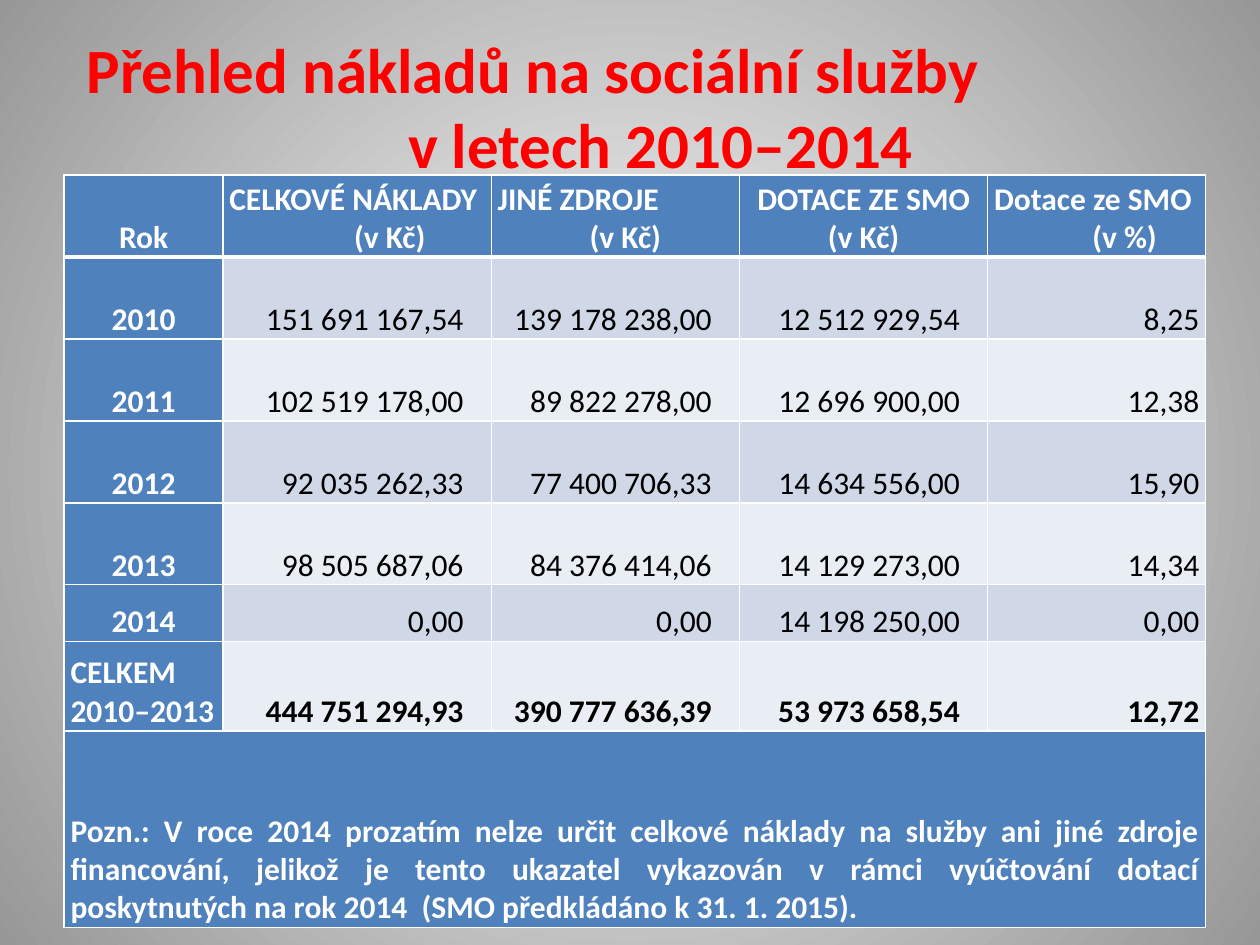
import lxml.etree
import pptx
import pptx.dml.color
import pptx.enum.text
import pptx.oxml
import pptx.oxml.ns
import pptx.util

Inches, Pt = pptx.util.Inches, pptx.util.Pt
ALIGN, ANCHOR = pptx.enum.text.PP_ALIGN, pptx.enum.text.MSO_ANCHOR
FONT = "Calibri"
WHITE, BLACK, RED, BLUE = "FFFFFF", "000000", "FF0000", "4F81BD"
BANDS = ["D0D8E8", "E9EDF4"]
COLUMNS = [1.26, 2.13, 1.97, 1.97, 1.73]
ROWS = [0.65] * 5 + [0.45, 0.71, 1.56]

TITLE = ["Přehled nákladů na sociální služby", "v letech 2010‒2014"]
# Lines of each heading, and the indent of its second line (None: centred)
HEADINGS = [
    (["Rok"], None),
    (["CELKOVÉ NÁKLADY", "(v Kč)"], 0.99),
    (["JINÉ ZDROJE", "(v Kč)"], 0.73),
    (["DOTACE ZE SMO (v Kč)"], None),
    (["Dotace ze SMO", "(v %)"], 0.78),
]
COSTS = [
    ["2010", "151 691 167,54", "139 178 238,00", "12 512 929,54", "8,25"],
    ["2011", "102 519 178,00", "89 822 278,00", "12 696 900,00", "12,38"],
    ["2012", "92 035 262,33", "77 400 706,33", "14 634 556,00", "15,90"],
    ["2013", "98 505 687,06", "84 376 414,06", "14 129 273,00", "14,34"],
    ["2014", "0,00", "0,00", "14 198 250,00", "0,00"],
    ["CELKEM 2010‒2013", "444 751 294,93", "390 777 636,39", "53 973 658,54", "12,72"],
]
NOTE = ("Pozn.: V roce 2014 prozatím nelze určit celkové náklady na služby ani jiné "
        "zdroje financování, jelikož je tento ukazatel vykazován v rámci vyúčtování "
        "dotací poskytnutých na rok 2014  (SMO předkládáno k 31. 1. 2015).")


def rgb(color):
    return pptx.dml.color.RGBColor.from_string(color)


def write(tf, lines, size, color, align, bold=True, indent=0):
    """Set one paragraph per line; the indent applies from the second line on."""
    tf.text = "\n".join(lines)
    for i, p in enumerate(tf.paragraphs):
        p.alignment = align
        if i and indent:
            p._p.get_or_add_pPr().set("marL", str(Inches(indent)))
        for r in p.runs:
            r.font.name, r.font.size, r.font.bold = FONT, Pt(size), bold
            r.font.color.rgb = rgb(color)


def set_background(slide):
    fill = slide.background.fill
    fill.gradient()
    for stop, color, position in zip(fill.gradient_stops, [WHITE, "979797"], [0, 1]):
        stop.color.rgb = rgb(color)
        stop.position = position
    qn = pptx.oxml.ns.qn
    grad = next(slide._element.iter(qn("a:gradFill")))
    grad.remove(grad.find(qn("a:lin")))
    circle = lxml.etree.SubElement(grad, qn("a:path"), path="circle")
    lxml.etree.SubElement(circle, qn("a:fillToRect"), dict.fromkeys("ltrb", "50000"))


def add_title(slide, left, top, width, height):
    tf = slide.shapes.add_textbox(left, top, width, height).text_frame
    tf.word_wrap = True
    tf.vertical_anchor = ANCHOR.MIDDLE
    write(tf, TITLE, 36, RED, ALIGN.LEFT, indent=2.55)


def style_cell(cell, fill, top=1, bottom=1):
    """Give the cell white borders, a fill, narrow margins and bottom anchoring."""
    tc_pr = cell._tc.get_or_add_tcPr()
    for side, width in zip("LRTB", [1, 1, top, bottom]):
        tc_pr.append(pptx.oxml.parse_xml(
            f'<a:ln{side} {pptx.oxml.ns.nsdecls("a")} w="{Pt(width)}"><a:solidFill>'
            f'<a:srgbClr val="{WHITE}"/></a:solidFill></a:ln{side}>'))
    cell.fill.solid()
    cell.fill.fore_color.rgb = rgb(fill)
    cell.margin_left = cell.margin_right = Inches(0.05)
    cell.margin_top = cell.margin_bottom = 0
    cell.vertical_anchor = ANCHOR.BOTTOM


def fill_headings(table):
    for c, (lines, indent) in enumerate(HEADINGS):
        cell = table.cell(0, c)
        style_cell(cell, BLUE, bottom=3)
        align = ALIGN.LEFT if indent else ALIGN.CENTER
        write(cell.text_frame, lines, 18, WHITE, align, indent=indent)


def fill_costs(table):
    last_col = len(COLUMNS) - 1
    for r, values in enumerate(COSTS, 1):
        total = r == len(COSTS)
        for c, value in enumerate(values):
            cell = table.cell(r, c)
            style_cell(cell, BANDS[(r - 1) % 2] if c else BLUE, top=3 if r == 1 else 1)
            if c == 0:
                align = ALIGN.LEFT if total else ALIGN.CENTER
                write(cell.text_frame, [value], 18, WHITE, align)
                continue
            if c < last_col:
                cell.margin_right = Inches(0.22)
            write(cell.text_frame, [value], 18, BLACK, ALIGN.RIGHT, bold=total)


def fill_note(table):
    row, last_col = len(ROWS) - 1, len(COLUMNS) - 1
    for c in range(len(COLUMNS)):
        style_cell(table.cell(row, c), BLUE)
    cell = table.cell(row, 0)
    cell.merge(table.cell(row, last_col))
    write(cell.text_frame, [NOTE], 18, WHITE, ALIGN.JUSTIFY)


def add_cost_table(slide, left, top):
    table = slide.shapes.add_table(len(ROWS), len(COLUMNS), left, top,
                                   Inches(sum(COLUMNS)), Inches(sum(ROWS))).table
    table.horz_banding = False
    for column, width in zip(table.columns, COLUMNS):
        column.width = Inches(width)
    for row, height in zip(table.rows, ROWS):
        row.height = Inches(height)
    fill_headings(table)
    fill_costs(table)
    fill_note(table)


def main():
    prs = pptx.Presentation()
    prs.slide_width, prs.slide_height = Inches(10), Inches(7.5)
    slide = prs.slides.add_slide(prs.slide_layouts[6])
    set_background(slide)
    add_title(slide, Inches(0.59), Inches(0.29), Inches(9), Inches(1.1))
    add_cost_table(slide, Inches(0.51), Inches(1.39))
    prs.save("out.pptx")


if __name__ == "__main__":
    main()
